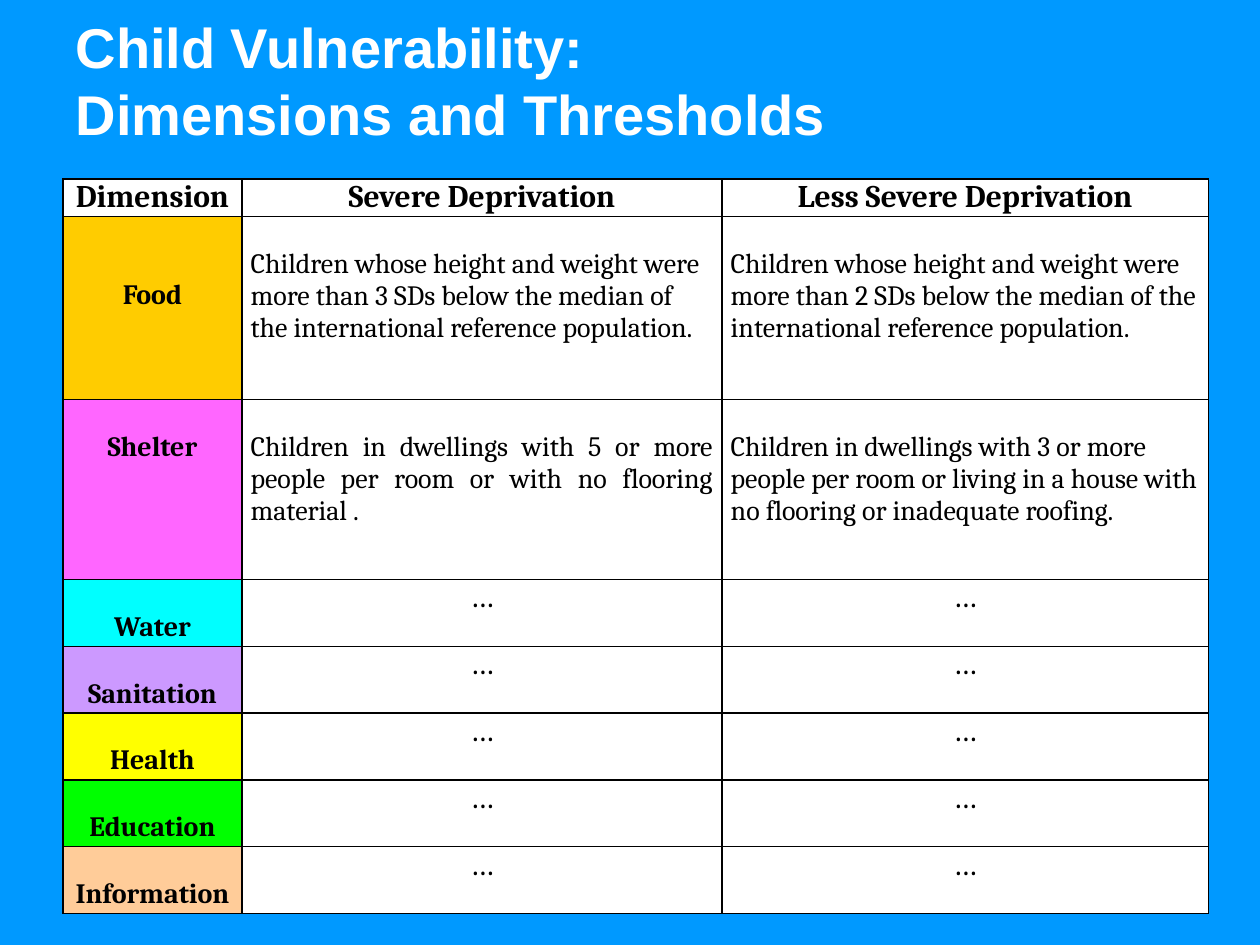
"""Build the slide on child vulnerability dimensions and thresholds."""
from lxml.etree import SubElement
from pptx import Presentation
from pptx.dml.color import RGBColor
from pptx.enum.text import MSO_ANCHOR as Anchor, PP_ALIGN as Align
from pptx.oxml.ns import qn
from pptx.util import Inches, Pt

COLORS = {
    "background": "0099FF", "white": "FFFFFF", "black": "000000",
    "Food": "FFCC00", "Shelter": "FF66FF", "Water": "00FFFF",
    "Sanitation": "CC99FF", "Health": "FFFF00", "Education": "00FF00",
    "Information": "FFCC99",
}
HEADINGS = ("Dimension", "Severe Deprivation", "Less Severe Deprivation")
THRESHOLDS = {
    "Food": (
        "Children whose height and weight were more than 3 SDs below the "
        "median of the international reference population.",
        "Children whose height and weight were more than 2 SDs below the "
        "median of the international reference population.",
    ),
    "Shelter": (
        "Children in dwellings with 5 or more people per room or with no "
        "flooring material .",
        "Children in dwellings with 3 or more people per room or living in "
        "a house with no flooring or inadequate roofing.",
    ),
}
OPEN_DIMENSIONS = ("Water", "Sanitation", "Health", "Education", "Information")
COLUMN_WIDTHS = (1.42, 3.81, 3.86)
ROW_HEIGHTS = (0.3, 1.45, 1.43) + (0.53,) * len(OPEN_DIMENSIONS)
LINE = 0.25

HEADING = {"size": Pt(18), "bold": True, "name": "Cambria"}
LABEL = {**HEADING, "size": Pt(16)}
BODY = {**LABEL, "bold": False}
ELLIPSIS = {**HEADING, "bold": False}
TITLE = {"size": Pt(32), "bold": True, "name": "Arial"}


def color(name):
    """Return the named colour."""
    return RGBColor.from_string(COLORS[name])


def apply(target, values):
    """Set each attribute of the target from a dict."""
    for name, value in values.items():
        setattr(target, name, value)


def write(frame, text, font, ink, align):
    """Write formatted text, one paragraph, into a text frame."""
    frame.text = text.replace("\n", "\v")
    para = frame.paragraphs[0]
    para.alignment = align
    for span in para.runs:
        apply(span.font, font)
        span.font.color.rgb = color(ink)


def add_borders(cell):
    """Draw a thin black line on all four sides of a cell."""
    properties = cell._tc.get_or_add_tcPr()
    for side in ("lnL", "lnR", "lnT", "lnB"):
        line = SubElement(properties, qn(f"a:{side}"), w=str(Pt(1)))
        fill = SubElement(line, qn("a:solidFill"))
        SubElement(fill, qn("a:srgbClr"), val=COLORS["black"])


def fill_cell(cell, text, font, align=Align.CENTER, fill="white", drop=0):
    """Fill a cell with text that starts a number of lines down."""
    apply(cell, {
        "margin_left": Inches(0.07), "margin_right": Inches(0.07),
        "margin_top": Inches(drop * LINE), "margin_bottom": 0,
        "vertical_anchor": Anchor.TOP,
    })
    add_borders(cell)
    cell.fill.solid()
    cell.fill.fore_color.rgb = color(fill)
    write(cell.text_frame, text, font, "black", align)


def add_title(page, text):
    """Place and format the slide title."""
    box = page.shapes.title
    apply(box, {"left": Inches(0.5), "top": Inches(0.17),
                "width": Inches(8.92), "height": Inches(0.92)})
    box.text_frame.vertical_anchor = Anchor.MIDDLE
    write(box.text_frame, text, TITLE, "white", Align.LEFT)


def add_threshold_table(page):
    """Add the table of dimensions and deprivation thresholds."""
    table = page.shapes.add_table(
        len(ROW_HEIGHTS), len(COLUMN_WIDTHS), Inches(0.5), Inches(1.42),
        Inches(sum(COLUMN_WIDTHS)), Inches(sum(ROW_HEIGHTS))).table
    apply(table, {"first_row": False, "horz_banding": False})
    for column, width in zip(table.columns, COLUMN_WIDTHS):
        column.width = Inches(width)
    for row, height in zip(table.rows, ROW_HEIGHTS):
        row.height = Inches(height)

    for column, heading in enumerate(HEADINGS):
        fill_cell(table.cell(0, column), heading, HEADING)
    for row, dimension in enumerate((*THRESHOLDS, *OPEN_DIMENSIONS), 1):
        fill_cell(table.cell(row, 0), dimension, LABEL, fill=dimension,
                  drop=2 if dimension == "Food" else 1)
        for column in (1, 2):
            cell = table.cell(row, column)
            if dimension in THRESHOLDS:
                justified = dimension == "Shelter" and column == 1
                fill_cell(cell, THRESHOLDS[dimension][column - 1], BODY,
                          Align.JUSTIFY if justified else Align.LEFT, drop=1)
            else:
                fill_cell(cell, "…", ELLIPSIS)


def main():
    """Build and save the deck."""
    deck = Presentation()
    apply(deck, {"slide_width": Inches(10), "slide_height": Inches(7.5)})
    page = deck.slides.add_slide(deck.slide_layouts[5])
    page.background.fill.solid()
    page.background.fill.fore_color.rgb = color("background")
    add_title(page, "Child Vulnerability: \nDimensions and Thresholds")
    add_threshold_table(page)
    deck.save("out.pptx")


if __name__ == "__main__":
    main()
